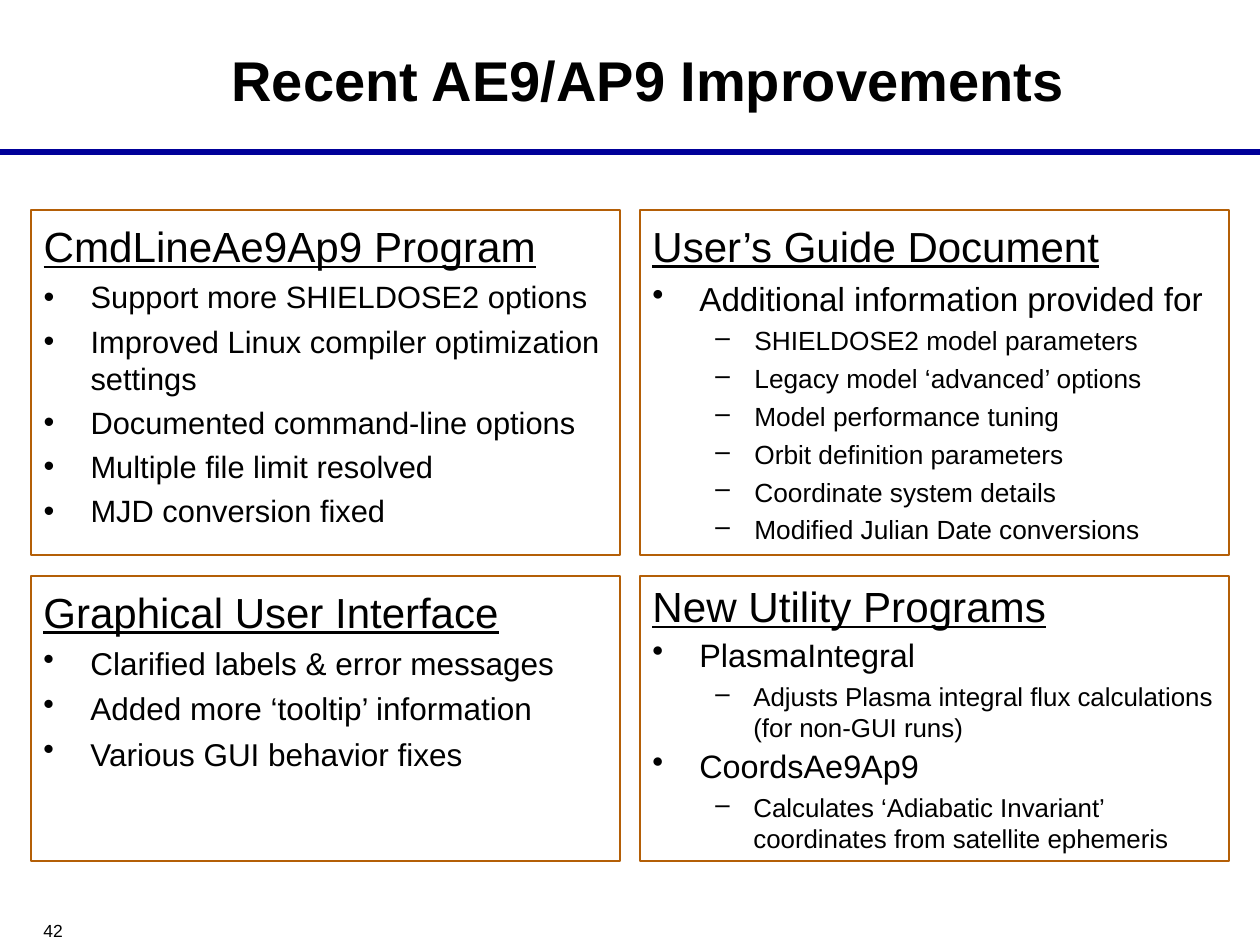
from lxml import etree
from pptx import Presentation
from pptx.dml.color import RGBColor
from pptx.enum.shapes import MSO_SHAPE
from pptx.enum.text import MSO_ANCHOR, MSO_AUTO_SIZE, PP_ALIGN
from pptx.oxml.ns import qn
from pptx.util import Pt

RECTANGLE = MSO_SHAPE.RECTANGLE
TOP, MIDDLE = MSO_ANCHOR.TOP, MSO_ANCHOR.MIDDLE
LEFT, CENTER = PP_ALIGN.LEFT, PP_ALIGN.CENTER
NO_AUTOFIT = MSO_AUTO_SIZE.NONE

BLACK = RGBColor(0x00, 0x00, 0x00)
NAVY = RGBColor(0x00, 0x00, 0x99)
ORANGE = RGBColor(0xB4, 0x5F, 0x07)
FONT = "Arial"
EMU_PER_PX = 914400 / 126

# Panel grid
COLUMNS = (31, 640)
PANEL_WIDTH = 589
ROWS = ((210, 345), (576, 285))  # top, height
SPACE_BEFORE = 0.24  # share of the text size

# Heading, then (level, text) items
PROGRAM = ("CmdLineAe9Ap9 Program", [
    (0, "Support more SHIELDOSE2 options"),
    (0, "Improved Linux compiler optimization settings"),
    (0, "Documented command-line options"),
    (0, "Multiple file limit resolved"),
    (0, "MJD conversion fixed"),
])
GUIDE = ("User’s Guide Document", [
    (0, "Additional information provided for"),
    (1, "SHIELDOSE2 model parameters"),
    (1, "Legacy model ‘advanced’ options"),
    (1, "Model performance tuning"),
    (1, "Orbit definition parameters"),
    (1, "Coordinate system details"),
    (1, "Modified Julian Date conversions"),
])
INTERFACE = ("Graphical User Interface", [
    (0, "Clarified labels & error messages"),
    (0, "Added more ‘tooltip’ information"),
    (0, "Various GUI behavior fixes"),
])
UTILITIES = ("New Utility Programs", [
    (0, "PlasmaIntegral"),
    (1, "Adjusts Plasma integral flux calculations (for non-GUI runs)"),
    (0, "CoordsAe9Ap9"),
    (1, "Calculates ‘Adiabatic Invariant’ coordinates from satellite ephemeris"),
])


def px(length):
    return round(length * EMU_PER_PX)


def place(shape, left, top, width, height):
    shape.left, shape.top = px(left), px(top)
    shape.width, shape.height = px(width), px(height)


def style(paragraph, size, bold=False, underline=False):
    font = paragraph.font
    font.name, font.size = FONT, Pt(size)
    font.bold, font.underline = bold, underline
    font.color.rgb = BLACK


def set_bullet(paragraph, margin, hanging, character=None):
    properties = paragraph._p.get_or_add_pPr()
    properties.set("marL", str(px(margin)))
    properties.set("indent", str(-px(hanging)))
    if character:
        etree.SubElement(properties, qn("a:buChar")).set("char", character)
    else:
        etree.SubElement(properties, qn("a:buNone"))


def set_title(title, text):
    place(title, 186, 37, 924, 84)
    frame = title.text_frame
    frame.text = text
    frame.vertical_anchor = MIDDLE
    frame.auto_size = NO_AUTOFIT
    paragraph = frame.paragraphs[0]
    paragraph.alignment = CENTER
    style(paragraph, 32, bold=True)


def add_rule(slide):
    rule = slide.shapes.add_shape(RECTANGLE, 0, px(149), px(1260), px(6))
    rule.shadow.inherit = False
    rule.fill.solid()
    rule.fill.fore_color.rgb = NAVY
    rule.line.fill.background()


def add_page_number(slide, number):
    box = slide.shapes.add_textbox(px(31), px(914), px(136), px(34))
    paragraph = box.text_frame.paragraphs[0]
    paragraph.text = number
    style(paragraph, 10)


def fill_panel(panel, column, row, content, sizes, line_spacing=1.0, sub_margin=102):
    """Format a panel; sizes are those of the heading and of each level."""
    top, height = ROWS[row]
    place(panel, COLUMNS[column], top, PANEL_WIDTH, height)
    panel.line.color.rgb = ORANGE
    panel.line.width = Pt(1.25)
    frame = panel.text_frame
    frame.word_wrap = True
    frame.auto_size = NO_AUTOFIT
    frame.vertical_anchor = TOP
    frame.margin_top = px(10)

    heading, items = content
    paragraph = frame.paragraphs[0]
    paragraph.text = heading
    set_bullet(paragraph, 47, 47)
    paragraph.space_before = Pt(0)
    paragraph.line_spacing = line_spacing
    paragraph.alignment = LEFT
    style(paragraph, sizes[0], underline=True)

    for level, text in items:
        size = sizes[level + 1]
        paragraph = frame.add_paragraph()
        paragraph.text = text
        paragraph.level = level
        if level:
            set_bullet(paragraph, sub_margin, sub_margin - 63, "–")
        else:
            set_bullet(paragraph, 47, 47, "•")
            paragraph.line_spacing = line_spacing
        paragraph.space_before = Pt(round(size * SPACE_BEFORE, 1))
        paragraph.alignment = LEFT
        style(paragraph, size)


def main():
    presentation = Presentation()
    presentation.slide_width, presentation.slide_height = px(1260), px(945)
    slide = presentation.slides.add_slide(presentation.slide_layouts[1])

    # Frame of the page
    add_page_number(slide, "42")
    add_rule(slide)
    set_title(slide.shapes.title, "Recent AE9/AP9 Improvements")

    # Four panels
    guide, utilities, interface = (
        slide.shapes.add_textbox(0, 0, 0, 0) for _ in range(3))
    fill_panel(slide.placeholders[1], 0, 0, PROGRAM, (24.1, 17.6))
    fill_panel(guide, 1, 0, GUIDE, (24, 19, 15))
    fill_panel(utilities, 1, 1, UTILITIES, (24.1, 18.5, 14.8),
               line_spacing=0.9, sub_margin=101)
    fill_panel(interface, 0, 1, INTERFACE, (24, 18))

    presentation.save("out.pptx")


if __name__ == "__main__":
    main()
